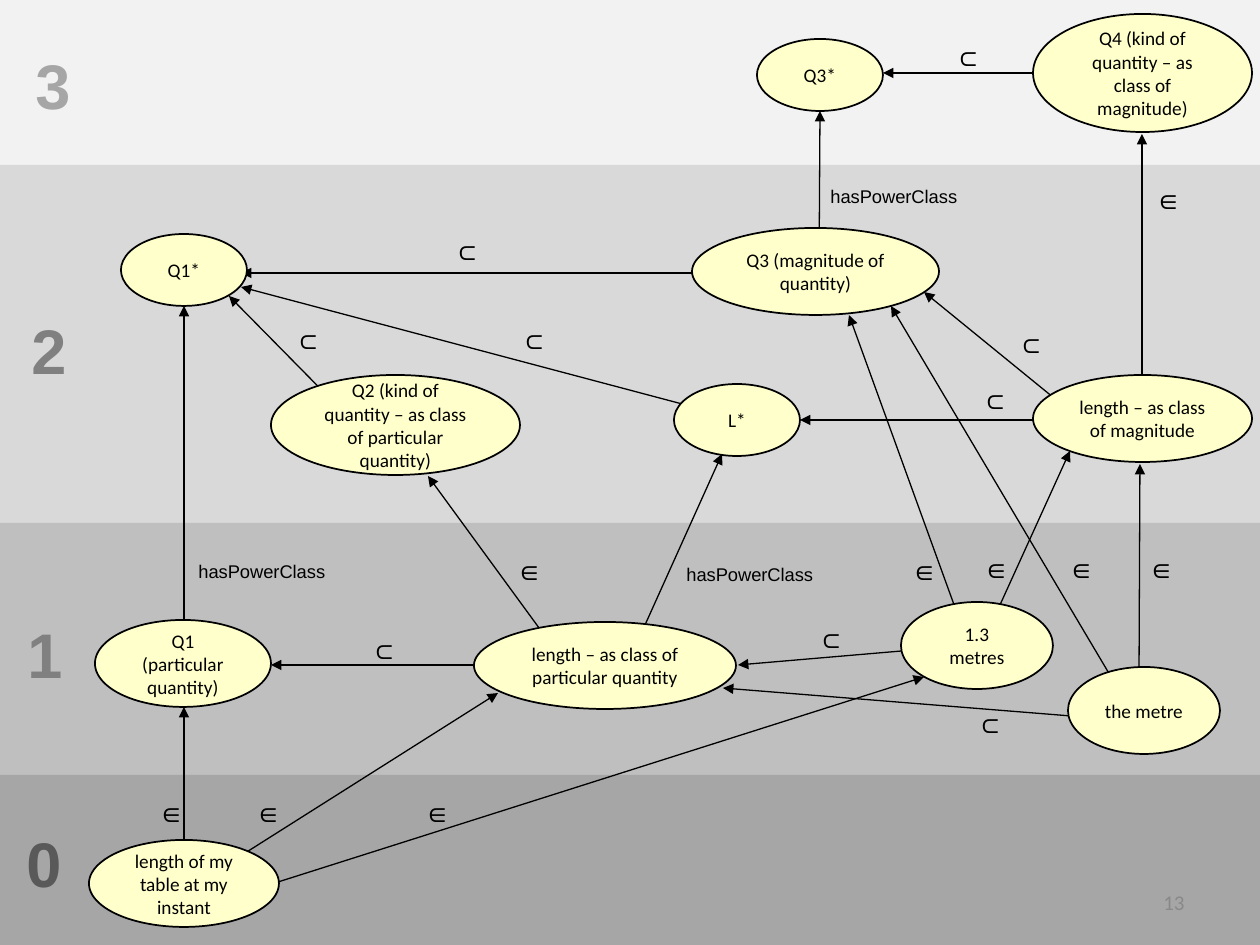
from pptx import Presentation
from pptx.dml.color import RGBColor
from pptx.enum.shapes import MSO_CONNECTOR, MSO_SHAPE
from pptx.enum.text import MSO_ANCHOR, MSO_AUTO_SIZE, PP_ALIGN
from pptx.oxml.ns import qn
from pptx.util import Emu, Pt
from lxml import etree

EMU_PER_PX = 9144000 / 1260
RECTANGLE, ELLIPSE = MSO_SHAPE.RECTANGLE, MSO_SHAPE.OVAL
STRAIGHT = MSO_CONNECTOR.STRAIGHT
MIDDLE = MSO_ANCHOR.MIDDLE
LEFT, CENTER, RIGHT = PP_ALIGN.LEFT, PP_ALIGN.CENTER, PP_ALIGN.RIGHT
GROW = MSO_AUTO_SIZE.SHAPE_TO_FIT_TEXT

COLORS = {
    "ink": "000000", "node": "FFFFCC", "page": "898989",
    "band3": "F2F2F2", "band2": "D9D9D9", "band1": "BFBFBF", "band0": "A6A6A6",
    "level3": "A6A6A6", "level2": "808080", "level1": "808080", "level0": "595959",
}

# Level: band top, band height, numeral left, numeral top
LEVELS = {
    3: (0, 170, 23, 40),
    2: (165, 363, 19, 305),
    1: (523, 253, 15, 609),
    0: (775, 170, 14, 818),
}

# Arrows: start x, start y, end x, end y
ARROWS = [
    (184, 845, 184, 707), (212, 874, 498, 693), (237, 895, 924, 677),
    (562, 665, 271, 665), (937, 648, 738, 665), (561, 658, 428, 476),
    (995, 616, 1070, 451), (184, 697, 184, 306), (368, 437, 229, 296),
    (1081, 420, 924, 292), (965, 635, 849, 315), (699, 273, 241, 273),
    (1038, 420, 800, 420), (627, 665, 722, 454), (735, 418, 241, 287),
    (819, 278, 820, 111), (1142, 377, 1142, 134), (1071, 716, 723, 688),
    (1126, 702, 891, 306), (1139, 688, 1140, 464), (1120, 73, 883, 73),
]

# Relation: width, height, font size, positions
RELATIONS = {
    "⊂": (44, 47, 16, [
        (358, 625), (805, 614), (282, 315), (1005, 319), (441, 226),
        (969, 375), (508, 315), (964, 699), (942, 32)]),
    "∈": (44, 47, 16, [
        (145, 788), (242, 788), (411, 788), (503, 546), (970, 544),
        (898, 546), (1142, 175), (1055, 544), (1135, 544)]),
    "hasPowerClass": (155, 37, 10.5, [(186, 554), (674, 557), (818, 179)]),
}

# Nodes: text, left, top, width, height
NODES = [
    ("length of my table at my instant", 89, 840, 190, 87),
    ("Q1 (particular quantity)", 95, 620, 176, 87),
    ("1.3 metres", 901, 602, 152, 87),
    ("length – as class of particular quantity", 474, 622, 262, 87),
    ("Q2 (kind of quantity – as class of particular quantity)", 271, 375, 249, 100),
    ("Q3 (magnitude of quantity)", 692, 228, 247, 87),
    ("length – as class of magnitude", 1033, 375, 219, 87),
    ("Q1*", 121, 234, 126, 72),
    ("L*", 674, 384, 126, 72),
    ("Q3*", 757, 39, 126, 72),
    ("the metre", 1068, 667, 152, 87),
    ("Q4 (kind of quantity – as class of magnitude)", 1033, 14, 219, 118),
]


def px(*lengths):
    return [Emu(round(length * EMU_PER_PX)) for length in lengths]


def rgb(name):
    return RGBColor.from_string(COLORS[name])


class Diagram:
    def __init__(self, slide):
        self.slide = slide

    def set_text(self, shape, text, size, font, color="ink", align=LEFT, bold=False):
        paragraph = shape.text_frame.paragraphs[0]
        paragraph.text = text
        paragraph.alignment = align
        paragraph.font.size = Pt(size)
        paragraph.font.name = font
        paragraph.font.bold = bold
        paragraph.font.color.rgb = rgb(color)

    def shape(self, kind, box, fill):
        shape = self.slide.shapes.add_shape(kind, *px(*box))
        shape.shadow.inherit = False
        shape.fill.solid()
        shape.fill.fore_color.rgb = rgb(fill)
        return shape

    def band(self, top, height, fill):
        self.shape(RECTANGLE, (0, top, 1260, height), fill).line.fill.background()

    def node(self, text, *box):
        shape = self.shape(ELLIPSE, box, "node")
        shape.line.color.rgb = rgb("ink")
        shape.line.width = Pt(1)
        shape.text_frame.word_wrap = True
        shape.text_frame.vertical_anchor = MIDDLE
        self.set_text(shape, text, 11, "Calibri", align=CENTER)

    def arrow(self, *ends):
        connector = self.slide.shapes.add_connector(STRAIGHT, *px(*ends))
        connector.line.color.rgb = rgb("ink")
        connector.line.width = Pt(0.75)
        properties = connector._element.spPr
        etree.SubElement(properties.find(qn("a:ln")), qn("a:tailEnd"), type="triangle")
        etree.SubElement(properties, qn("a:effectLst"))

    def label(self, text, box, size, **style):
        shape = self.slide.shapes.add_textbox(*px(*box))
        shape.text_frame.word_wrap = False
        shape.text_frame.auto_size = GROW
        self.set_text(shape, text, size, "Arial", **style)

    def page_number(self, text, *box):
        shape = self.slide.shapes.add_textbox(*px(*box))
        shape.text_frame.word_wrap = True
        shape.text_frame.vertical_anchor = MIDDLE
        self.set_text(shape, text, 12, "Calibri", "page", RIGHT)


def main():
    presentation = Presentation()
    presentation.slide_width, presentation.slide_height = px(1260, 945)
    diagram = Diagram(presentation.slides.add_slide(presentation.slide_layouts[6]))

    # Background bands
    for level, (top, height, _, _) in LEVELS.items():
        diagram.band(top, height, f"band{level}")
    diagram.page_number("13", 903, 877, 294, 50)

    # Arrows lie under the nodes
    for ends in ARROWS:
        diagram.arrow(*ends)
    for node in NODES:
        diagram.node(*node)

    # Relation labels
    for text, (width, height, size, positions) in RELATIONS.items():
        for left, top in positions:
            diagram.label(text, (left, top, width, height), size)

    # Level numerals
    for level, (_, _, left, top) in LEVELS.items():
        diagram.label(str(level), (left, top, 60, 89), 36, color=f"level{level}", bold=True)

    presentation.save("out.pptx")


if __name__ == "__main__":
    main()
